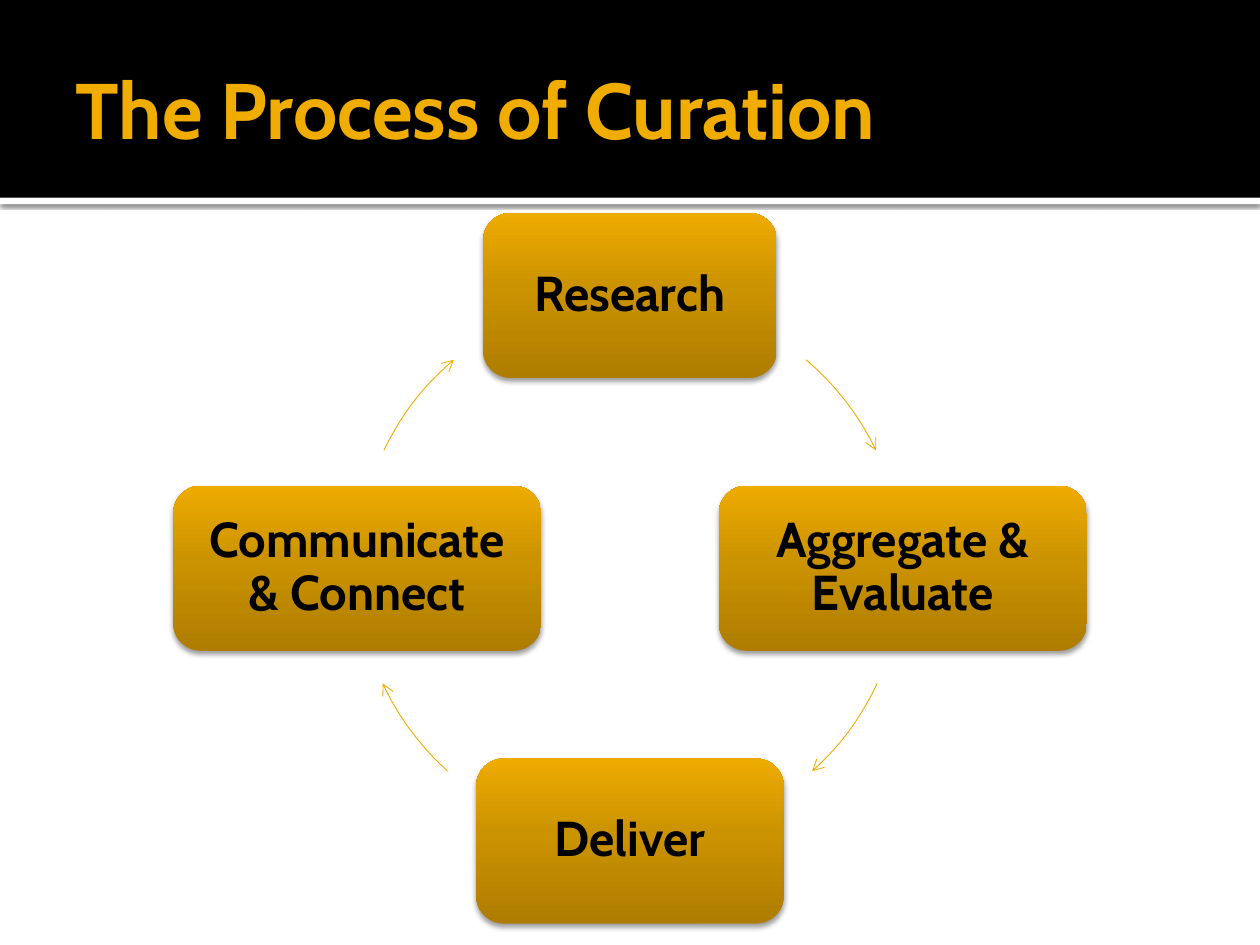
import math
import pptx
import pptx.util
import pptx.dml.color
import pptx.enum.shapes
import pptx.enum.text
import pptx.oxml
import pptx.oxml.ns

Inches = pptx.util.Inches
SHAPE = pptx.enum.shapes.MSO_SHAPE
ALIGN = pptx.enum.text.PP_ALIGN
FONT = "Cabin"
HUES = {"gold": "F0AD00", "light": "EEAB00", "mid": "CC9300", "dark": "AE7D00",
        "black": "000000", "white": "FFFFFF"}

# Content: steps of the cycle as text, angle and box width
TITLE = "The Process of Curation"
STEPS = [
    ("Research", -90, 2.33),
    ("Aggregate & Evaluate", 0, 2.92),
    ("Deliver", 90, 2.44),
    ("Communicate & Connect", 180, 2.92),
]
ARCS = [(-49.8, -25.6), (25, 48.1), (131.9, 155), (205.6, 229.8)]
STOPS = [(0, "dark"), (55, "mid"), (100, "light")]
MID_X, MID_Y, RING = 5, 4.51, 4.33
RADIUS = RING / 2
BOX_H = 1.31


def color(name):
    return pptx.dml.color.RGBColor.from_string(HUES[name])


def add_xml(parent, body):
    """Append one drawing element, given as markup."""
    tag, rest = body.split(" ", 1)
    space = pptx.oxml.ns.nsdecls("a")
    parent.append(pptx.oxml.parse_xml(f"<a:{tag} {space} {rest}"))


def find(shape, tag):
    return shape._element.spPr.find(".//" + pptx.oxml.ns.qn(tag))


def clear(node):
    for old in list(node):
        node.remove(old)


def write(shape, text, size=28, hue="black", align=ALIGN.CENTER,
          inset=(0.18, 0.18, 0.18, 0.18), space=0.9):
    frame = shape.text_frame
    frame.word_wrap = True
    frame.auto_size = pptx.enum.text.MSO_AUTO_SIZE.NONE
    frame.vertical_anchor = pptx.enum.text.MSO_ANCHOR.MIDDLE
    (frame.margin_left, frame.margin_top,
     frame.margin_right, frame.margin_bottom) = map(Inches, inset)
    para = frame.paragraphs[0]
    para.alignment = align
    para.line_spacing = space
    run = para.add_run()
    run.text = text
    run.font.name = FONT
    run.font.size = pptx.util.Pt(size)
    run.font.bold = True
    run.font.color.rgb = color(hue)


def add_box(slide, kind, left, top, width, height, hue):
    box = slide.shapes.add_shape(kind, *map(Inches, (left, top, width, height)))
    box.shadow.inherit = False
    box.fill.solid()
    box.fill.fore_color.rgb = color(hue)
    box.line.fill.background()
    return box


def add_shadow(shape, alpha, blur, dist):
    add_xml(find(shape, "a:effectLst"),
            f'outerShdw blurRad="{pptx.util.Pt(blur)}" dist="{pptx.util.Pt(dist)}" '
            f'dir="5400000" algn="ctr" rotWithShape="0"><a:srgbClr val="{HUES["black"]}">'
            f'<a:alpha val="{alpha * 1000}"/></a:srgbClr></a:outerShdw>')


def add_shade(shape):
    shape.fill.gradient()
    shape.fill.gradient_angle = 90
    stops = find(shape, "a:gsLst")
    clear(stops)
    for pos, hue in STOPS:
        add_xml(stops, f'gs pos="{pos * 1000}"><a:srgbClr val="{HUES[hue]}"/></a:gs>')


def on_ring(angle, mid_x=MID_X, mid_y=MID_Y):
    turn = math.radians(angle)
    return mid_x + RADIUS * math.cos(turn), mid_y + RADIUS * math.sin(turn)


def add_arc(slide, start, end):
    """Draw a true arc in a frame that spans the whole ring."""
    first, last = [tuple(map(Inches, on_ring(a, RADIUS, RADIUS))) for a in (start, end)]
    draft = slide.shapes.build_freeform(*first)
    draft.add_line_segments([last], close=False)
    arc = draft.convert_to_shape()
    arc.left, arc.top = Inches(MID_X - RADIUS), Inches(MID_Y - RADIUS)
    arc.width = arc.height = Inches(RING)
    curve = find(arc, "a:path")
    clear(curve)
    curve.set("w", str(Inches(RING)))
    curve.set("h", str(Inches(RING)))
    half = Inches(RADIUS)
    add_xml(curve, f'moveTo ><a:pt x="{first[0]}" y="{first[1]}"/></a:moveTo>')
    add_xml(curve, f'arcTo wR="{half}" hR="{half}" stAng="{round(start % 360 * 60000)}" '
            f'swAng="{round((end - start) * 60000)}"/>')
    arc.shadow.inherit = False
    arc.fill.background()
    arc.line.color.rgb = color("gold")
    arc.line.width = pptx.util.Pt(0.5)
    add_xml(find(arc, "a:ln"), 'tailEnd type="arrow"/>')


def main():
    deck = pptx.Presentation()
    deck.slide_width, deck.slide_height = Inches(10), Inches(7.5)
    slide = deck.slides.add_slide(deck.slide_layouts[5])

    # Header band and the white strip below it
    strip = add_box(slide, SHAPE.RECTANGLE, 0, 1.57, 10, 0.05, "white")
    add_shadow(strip, 60, 2.5, 0.8)
    add_box(slide, SHAPE.RECTANGLE, 0, 0, 10, 1.57, "black")

    # Title, brought in front of the band
    title = slide.shapes.title
    title.left, title.top, title.width, title.height = map(Inches, (0.5, 0.17, 9, 1.37))
    write(title, TITLE, size=45, hue="gold", align=ALIGN.LEFT,
          inset=(0.1, 0.05, 0.05, 0.05), space=1.0)
    slide.shapes._spTree.append(title._element)

    # Cycle: each step is followed by the arc to the next
    for (text, angle, width), arc in zip(STEPS, ARCS):
        x, y = on_ring(angle)
        box = add_box(slide, SHAPE.ROUNDED_RECTANGLE, x - width / 2, y - BOX_H / 2,
                      width, BOX_H, "gold")
        add_shade(box)
        add_shadow(box, 38, 3.1, 2)
        write(box, text)
        add_arc(slide, *arc)

    deck.save("out.pptx")


if __name__ == "__main__":
    main()
